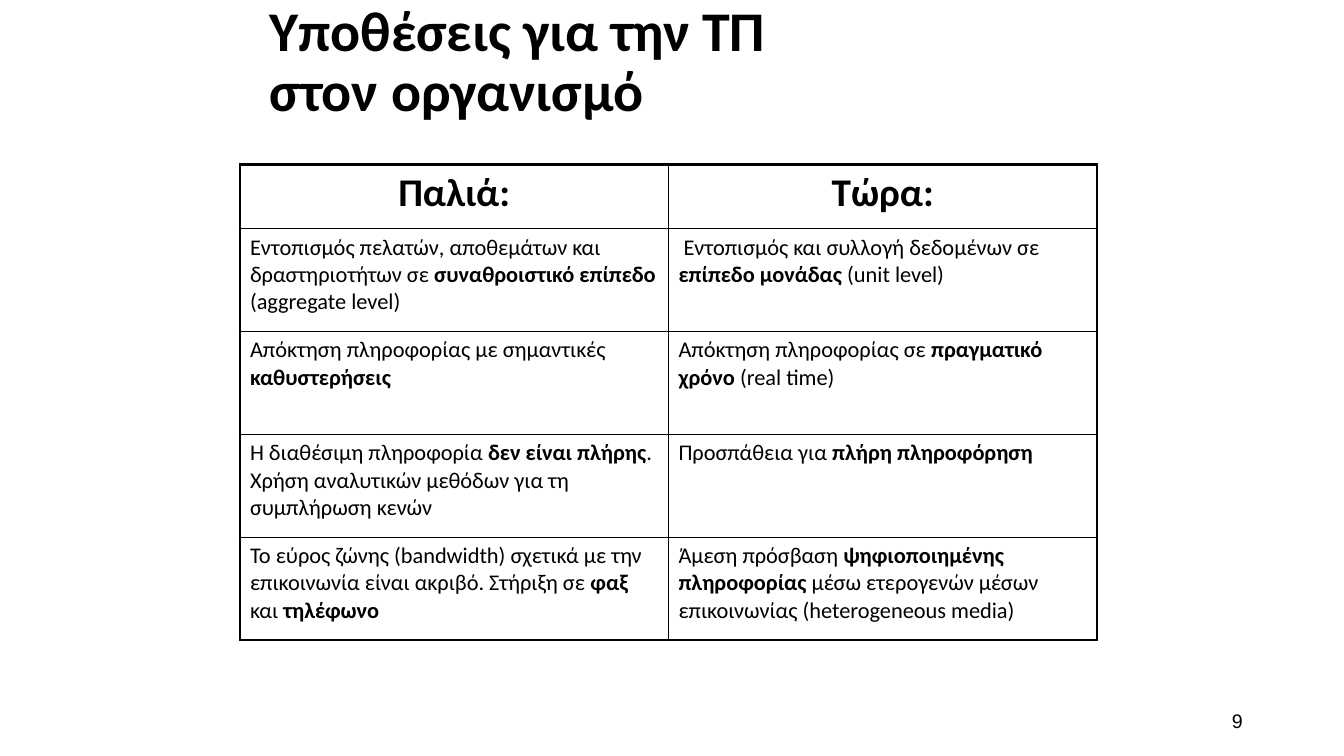
"""Build a slide comparing old and new assumptions about IT in the organisation."""
from dataclasses import dataclass

from lxml import etree
from pptx import Presentation
from pptx import util as u
from pptx.dml import color
from pptx.enum import text
from pptx.oxml import ns

WIDTH, HEIGHT = u.Inches(13.33), u.Inches(7.5)
COLUMN, HEADER_ROW, BODY_ROW = u.Inches(4.25), u.Inches(0.64), u.Inches(1.02)
TABLE_LEFT, TABLE_TOP = u.Inches(2.38), u.Inches(1.63)
COLOURS = {"ink": "000000", "paper": "FFFFFF"}
THIN, THICK = u.Pt(1), u.Pt(2.25)


@dataclass(frozen=True)
class Style:
    """Typeface, size and alignment of a paragraph."""
    size: int
    bold: bool = False
    align: text.PP_ALIGN = text.PP_ALIGN.LEFT
    face: str = "Calibri"
    spacing: float = 1.0


@dataclass(frozen=True)
class Label:
    """Text box placed by shares of the slide's size."""
    words: str
    left: float
    top: float
    width: float
    height: float
    style: Style


@dataclass(frozen=True)
class Assumption:
    """Old and new views, with bold stretches between asterisks."""
    before: str
    now: str


HEADING = Style(28, bold=True, align=text.PP_ALIGN.CENTER)
BODY = Style(16)
LABELS = [
    Label("9", 0.707, 0.927, 0.225, 0.053, Style(14, align=text.PP_ALIGN.RIGHT, face="Arial")),
    Label("Υποθέσεις για την ΤΠ\vστον οργανισμό", 0.193, 0, 0.638, 0.167,
          Style(40, bold=True, spacing=0.9)),
]
ASSUMPTIONS = [
    Assumption("Παλιά:", "Τώρα:"),
    Assumption("Εντοπισμός πελατών, αποθεμάτων και δραστηριοτήτων σε "
               "*συναθροιστικό επίπεδο *(aggregate level)",
               " Εντοπισμός και συλλογή δεδομένων σε *επίπεδο μονάδας *(unit level)"),
    Assumption("Απόκτηση πληροφορίας με σημαντικές *καθυστερήσεις*",
               "Απόκτηση πληροφορίας σε *πραγματικό χρόνο* (real time)"),
    Assumption("Η διαθέσιμη πληροφορία *δεν είναι πλήρης*. "
               "Χρήση αναλυτικών μεθόδων για τη συμπλήρωση κενών",
               "Προσπάθεια για *πλήρη πληροφόρηση*"),
    Assumption("Το εύρος ζώνης (bandwidth) σχετικά με την επικοινωνία είναι ακριβό. "
               "Στήριξη σε *φαξ* και *τηλέφωνο*",
               "Άμεση πρόσβαση *ψηφιοποιημένης πληροφορίας* μέσω ετερογενών μέσων "
               "επικοινωνίας (heterogeneous media)"),
]


def write(frame, words: str, style: Style) -> None:
    """Fill a text frame with one paragraph, bold between asterisks."""
    para = frame.paragraphs[0]
    para.alignment = style.align
    para.line_spacing = style.spacing
    para.font.name = style.face
    para.font.size = u.Pt(style.size)
    para.font.bold = style.bold
    para.font.color.rgb = color.RGBColor.from_string(COLOURS["ink"])
    for line_number, line in enumerate(words.split("\v")):
        if line_number:
            para.add_line_break()
        for index, stretch in enumerate(line.split("*")):
            if stretch:
                span = para.add_run()
                span.text = stretch
                if index % 2:
                    span.font.bold = True


def add_label(page, label: Label) -> None:
    """Draw a vertically centred text box."""
    box = page.shapes.add_textbox(round(label.left * WIDTH), round(label.top * HEIGHT),
                                  round(label.width * WIDTH), round(label.height * HEIGHT))
    box.text_frame.word_wrap = True
    box.text_frame.vertical_anchor = text.MSO_ANCHOR.MIDDLE
    write(box.text_frame, label.words, label.style)


def add_borders(cell, thick_sides: dict[str, bool]) -> None:
    """Outline a cell, with thick lines on the sides marked true."""
    properties = cell._tc.get_or_add_tcPr()
    for index, (side, thick) in enumerate(thick_sides.items()):
        line = etree.Element(ns.qn(f"a:ln{side}"), w=str(THICK if thick else THIN))
        fill = etree.SubElement(line, ns.qn("a:solidFill"))
        etree.SubElement(fill, ns.qn("a:srgbClr"), val=COLOURS["ink"])
        properties.insert(index, line)


def add_comparison(page, assumptions: list[Assumption]) -> None:
    """Draw the two-column table with a thick outer frame."""
    last = len(assumptions) - 1
    table = page.shapes.add_table(last + 1, 2, TABLE_LEFT, TABLE_TOP, 2 * COLUMN,
                                  HEADER_ROW + last * BODY_ROW).table
    table.first_row = table.horz_banding = False
    for column in table.columns:
        column.width = COLUMN
    for row, assumption in enumerate(assumptions):
        table.rows[row].height = BODY_ROW if row else HEADER_ROW
        for column, words in enumerate((assumption.before, assumption.now)):
            cell = table.cell(row, column)
            cell.fill.solid()
            cell.fill.fore_color.rgb = color.RGBColor.from_string(COLOURS["paper"])
            add_borders(cell, {"L": column == 0, "R": column == 1,
                               "T": row == 0, "B": row == last})
            write(cell.text_frame, words, BODY if row else HEADING)


def main() -> None:
    """Build and save the deck."""
    deck = Presentation()
    deck.slide_width, deck.slide_height = WIDTH, HEIGHT
    page = deck.slides.add_slide(deck.slide_layouts[6])
    for label in LABELS:
        add_label(page, label)
    add_comparison(page, ASSUMPTIONS)
    deck.save("out.pptx")


if __name__ == "__main__":
    main()
